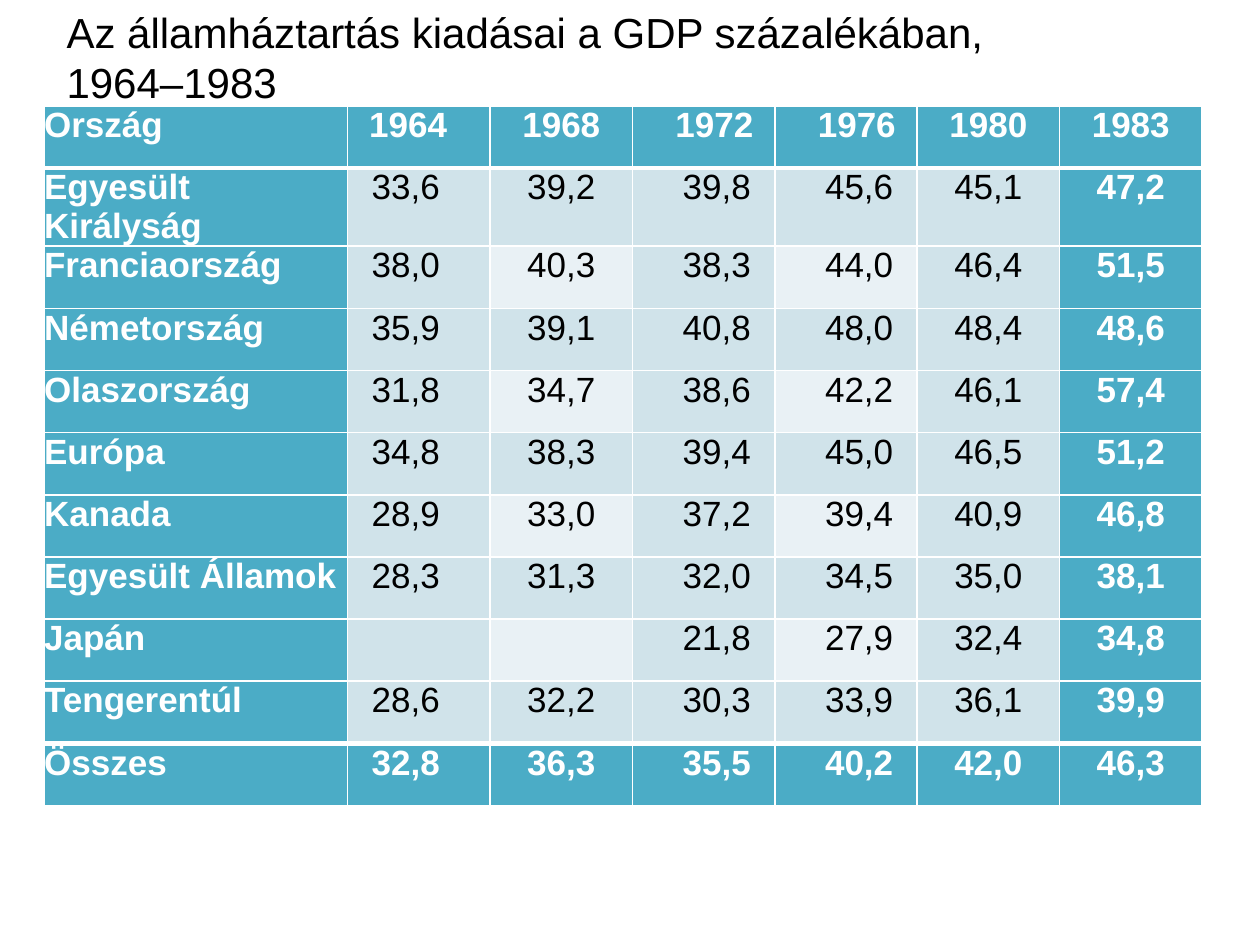
from lxml import etree
from pptx import Presentation, util as u
from pptx.dml.color import RGBColor
from pptx.enum import text
from pptx.oxml import ns

TEAL = RGBColor(0x4B, 0xAC, 0xC6)
BAND = RGBColor(0xD0, 0xE3, 0xEA)
PALE = RGBColor(0xE9, 0xF1, 0xF5)
WHITE = RGBColor(0xFF, 0xFF, 0xFF)
BLACK = RGBColor(0, 0, 0)

TITLE = "Az államháztartás kiadásai a GDP százalékában, 1964–1983"
ROWS = [
    ("Ország", "1964", "1968", "1972", "1976", "1980", "1983"),
    ("Egyesült Királyság", "33,6", "39,2", "39,8", "45,6", "45,1", "47,2"),
    ("Franciaország", "38,0", "40,3", "38,3", "44,0", "46,4", "51,5"),
    ("Németország", "35,9", "39,1", "40,8", "48,0", "48,4", "48,6"),
    ("Olaszország", "31,8", "34,7", "38,6", "42,2", "46,1", "57,4"),
    ("Európa", "34,8", "38,3", "39,4", "45,0", "46,5", "51,2"),
    ("Kanada", "28,9", "33,0", "37,2", "39,4", "40,9", "46,8"),
    ("Egyesült Államok", "28,3", "31,3", "32,0", "34,5", "35,0", "38,1"),
    ("Japán", "", "", "21,8", "27,9", "32,4", "34,8"),
    ("Tengerentúl", "28,6", "32,2", "30,3", "33,9", "36,1", "39,9"),
    ("Összes", "32,8", "36,3", "35,5", "40,2", "42,0", "46,3"),
]
LAST_ROW, LAST_COLUMN = len(ROWS) - 1, len(ROWS[0]) - 1
LEFT, CENTER, RIGHT = text.PP_ALIGN.LEFT, text.PP_ALIGN.CENTER, text.PP_ALIGN.RIGHT
ALIGNMENTS = [LEFT, LEFT, CENTER, RIGHT, RIGHT, CENTER, CENTER]
LEFT_INDENTS = [0, 0.19, 0.16, 0, 0, 0.16, 0.16]
RIGHT_INDENTS = [0, 0, 0.16, 0.19, 0.19, 0.16, 0.16]


class SlideBuilder:
    """Draws titles and tables in one style on the current slide."""

    font = "Arial"

    def __init__(self, slide):
        self.slide = slide

    def add_run(self, paragraph, content, size, color, bold=False):
        run = paragraph.add_run()
        run.text = content
        run.font.name = self.font
        run.font.size = u.Pt(size)
        run.font.bold = bold
        run.font.color.rgb = color

    def add_title(self, content, left, top, width, height):
        shape = self.slide.shapes.add_textbox(
            u.Inches(left), u.Inches(top), u.Inches(width), u.Inches(height))
        shape.text_frame.word_wrap = True
        self.add_run(shape.text_frame.paragraphs[0], content, 24, BLACK)

    def add_border(self, cell, side, width):
        line = etree.SubElement(cell._tc.get_or_add_tcPr(), ns.qn(f"a:ln{side}"), w=str(u.Pt(width)))
        fill = etree.SubElement(line, ns.qn("a:solidFill"))
        etree.SubElement(fill, ns.qn("a:srgbClr"), val=str(WHITE))

    def fill_cell(self, cell, row, column, content):
        cell.margin_left = cell.margin_right = cell.margin_top = cell.margin_bottom = 0
        strong = row in (0, LAST_ROW) or column in (0, LAST_COLUMN)
        for side in "LR":
            self.add_border(cell, side, 1)
        self.add_border(cell, "T", 3 if row in (1, LAST_ROW) else 1)
        self.add_border(cell, "B", 3 if row in (0, LAST_ROW - 1) else 1)
        pale = row % 2 == 0 and column in (2, 4)
        cell.fill.solid()
        cell.fill.fore_color.rgb = TEAL if strong else PALE if pale else BAND
        if not content:
            return
        paragraph = cell.text_frame.paragraphs[0]
        paragraph.alignment = ALIGNMENTS[column]
        paragraph.space_before = u.Pt(1.4 if row in (1, LAST_ROW) else 1.6)
        properties = paragraph._p.get_or_add_pPr()
        narrowing = 0.02 if row == 0 else 0
        for name, indents in (("marL", LEFT_INDENTS), ("marR", RIGHT_INDENTS)):
            indent = indents[column] - (narrowing if indents[column] == 0.19 else 0)
            properties.set(name, str(u.Inches(indent)))
        properties.set("indent", "0")
        self.add_run(paragraph, content, 20, WHITE if strong else BLACK, strong)

    def add_table(self, rows, left, top, height, first_width, other_width):
        widths = [first_width] + [other_width] * LAST_COLUMN
        table = self.slide.shapes.add_table(
            len(rows), len(widths), u.Inches(left), u.Inches(top),
            u.Inches(sum(widths)), u.Inches(height)).table
        for column, width in zip(table.columns, widths):
            column.width = u.Inches(width)
        for row, values in enumerate(rows):
            for column, content in enumerate(values):
                self.fill_cell(table.cell(row, column), row, column, content)


def main():
    presentation = Presentation()
    presentation.slide_width = u.Inches(10)
    presentation.slide_height = u.Inches(7.5)
    builder = SlideBuilder(presentation.slides.add_slide(presentation.slide_layouts[6]))
    builder.add_table(ROWS, 0.35, 0.84, 5.43, 2.41, 1.13)
    builder.add_title(TITLE, 0.43, 0, 8.27, 0.91)
    presentation.save("out.pptx")


if __name__ == "__main__":
    main()
